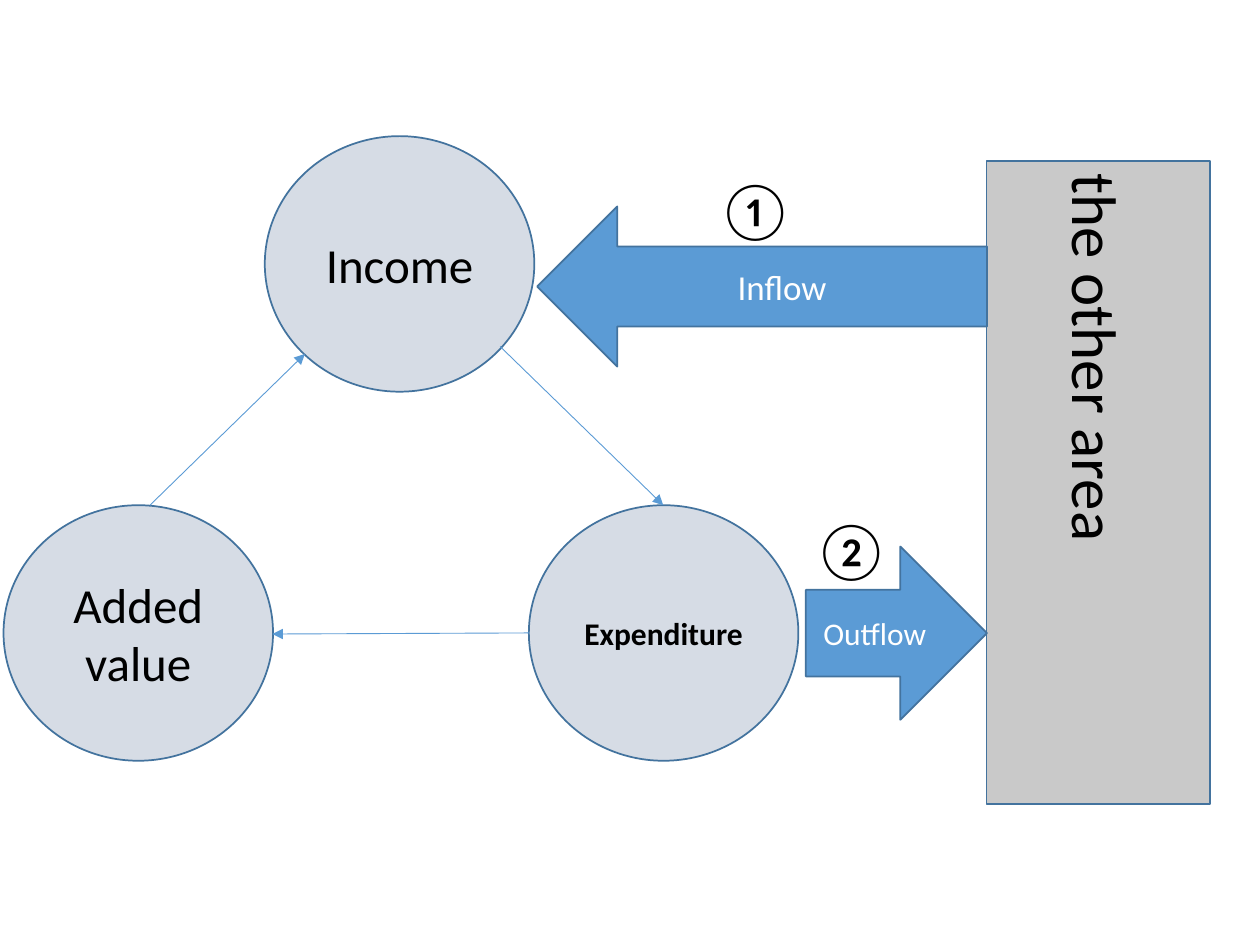
from pptx import Presentation
from pptx.dml.color import RGBColor
from pptx.enum.shapes import MSO_CONNECTOR, MSO_SHAPE
from pptx.enum.text import MSO_ANCHOR, MSO_AUTO_SIZE, PP_ALIGN
from pptx.oxml.ns import qn
from pptx.util import Pt
from lxml.etree import SubElement

BLACK, WHITE = "000000", "FFFFFF"
BLUE, OUTLINE = "5B9BD5", "43739E"
PALE, GREY = "D6DCE5", "C9C9C9"
CIRCLE_SIZE = (154, 146)
CIRCLE_ROW = 288.7


def color(hex_string):
    return RGBColor.from_string(hex_string)


class FlowPage:
    """Holds the style and the current slide."""

    font_name = "Calibri"

    def __init__(self, page):
        self.page = page

    def add_text(self, frame, text, size, ink, align, bold=False):
        frame.word_wrap = True
        para = frame.paragraphs[0]
        para.alignment = align
        span = para.add_run()
        span.text = text
        style = {"name": self.font_name, "size": Pt(size), "bold": bold}
        for name, value in style.items():
            setattr(span.font, name, value)
        span.font.color.rgb = color(ink)

    def shape(self, kind, place, fill, text, size, ink=BLACK, bold=False):
        box = self.page.shapes.add_shape(kind, *map(Pt, place))
        box.shadow.inherit = False
        box.fill.solid()
        box.fill.fore_color.rgb = color(fill)
        box.line.color.rgb = color(OUTLINE)
        box.line.width = Pt(1)
        box.text_frame.vertical_anchor = MSO_ANCHOR.MIDDLE
        self.add_text(box.text_frame, text, size, ink, PP_ALIGN.CENTER, bold)
        return box

    def circle(self, left, top, text, size=28, bold=False):
        place = (left, top, *CIRCLE_SIZE)
        return self.shape(MSO_SHAPE.OVAL, place, PALE, text, size, bold=bold)

    def vertical_bar(self, place, text, size):
        bar = self.shape(MSO_SHAPE.RECTANGLE, place, GREY, text, size)
        bar.text_frame._txBody.bodyPr.set("vert", "eaVert")
        return bar

    def arrow_line(self, start, end):
        line = self.page.shapes.add_connector(
            MSO_CONNECTOR.STRAIGHT, *map(Pt, (*start, *end)))
        line.line.color.rgb = color(BLUE)
        line.line.width = Pt(0.5)
        SubElement(line.line._get_or_add_ln(), qn("a:tailEnd"), type="triangle")
        SubElement(line._element.spPr, qn("a:effectLst"))
        return line

    def number(self, place, text):
        box = self.page.shapes.add_textbox(*map(Pt, place))
        self.add_text(box.text_frame, text, 33, BLACK, PP_ALIGN.LEFT)
        box.text_frame.auto_size = MSO_AUTO_SIZE.SHAPE_TO_FIT_TEXT
        return box


def main():
    deck = Presentation()
    deck.slide_width, deck.slide_height = Pt(720), Pt(540)
    flow = FlowPage(deck.slides.add_slide(deck.slide_layouts[6]))

    flow.circle(151.3, 77.8, "Income")
    flow.circle(302.2, CIRCLE_ROW, "Expenditure", size=18, bold=True)
    flow.circle(2, CIRCLE_ROW, "Added value")

    flow.arrow_line((85.7, CIRCLE_ROW), (174.2, 202.3))
    flow.arrow_line((285.8, 198), (379, CIRCLE_ROW))
    flow.arrow_line((302.2, 361.7), (155.7, 362.3))

    flow.vertical_bar((563.8, 92.2, 127.5, 367.2), "the other area", 36)
    flow.shape(MSO_SHAPE.LEFT_ARROW, (307, 118, 257, 91.5),
               BLUE, "Inflow", 20, WHITE)
    flow.shape(MSO_SHAPE.RIGHT_ARROW, (460.5, 312.3, 103.5, 99),
               BLUE, "Outflow", 18, WHITE)

    flow.number((403.2, 95.8, 47.5, 47.5), "①")
    flow.number((458, 289.8, 49.5, 47.5), "②")

    deck.save("out.pptx")


if __name__ == "__main__":
    main()
